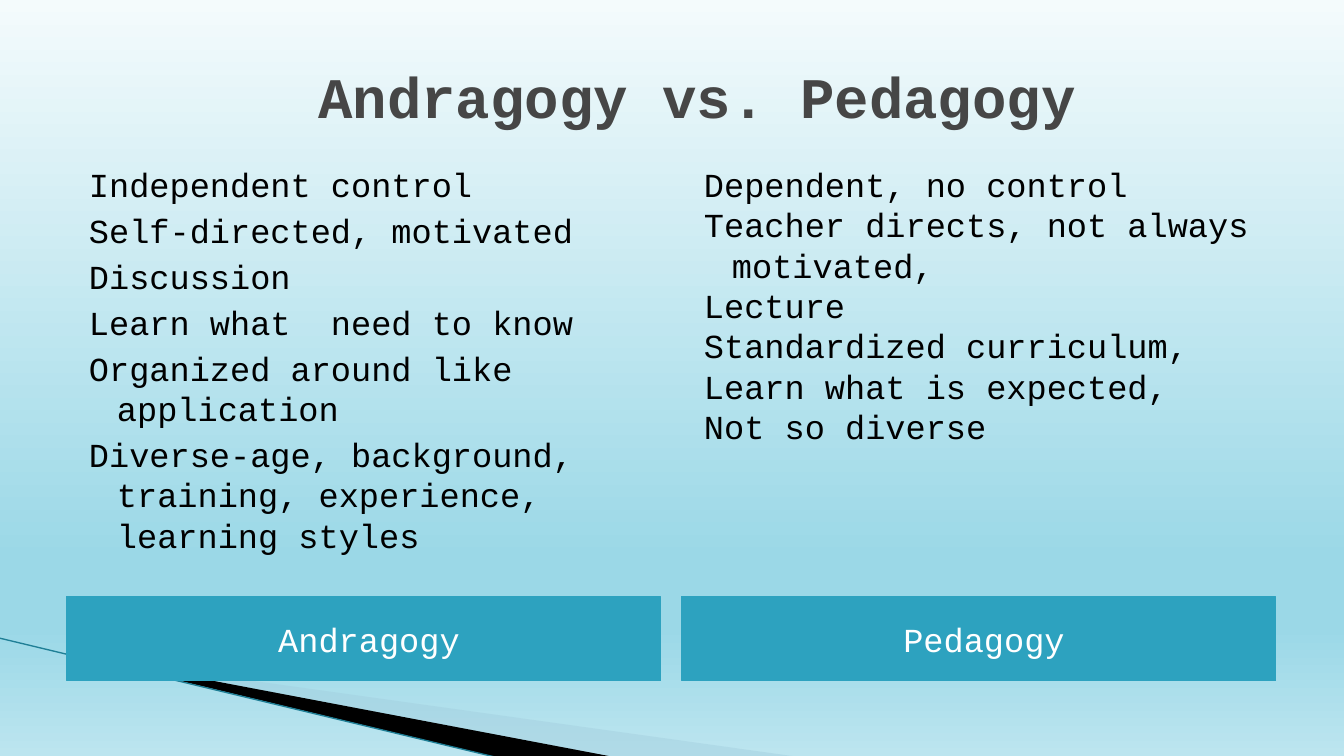
from dataclasses import dataclass

from lxml import etree
from pptx import Presentation
from pptx.dml.color import RGBColor
from pptx.enum.shapes import MSO_CONNECTOR as CONN, MSO_SHAPE as SHAPE
from pptx.enum.text import MSO_ANCHOR as ANCHOR, MSO_AUTO_SIZE as AUTO, PP_ALIGN as ALIGN
from pptx.oxml.ns import qn
from pptx.util import Pt

# Content
TITLE = "Andragogy vs. Pedagogy"
COLUMNS = [
    {"name": "Andragogy", "space": 4, "points": [
        "Independent control",
        "Self-directed, motivated",
        "Discussion",
        "Learn what  need to know",
        "Organized around like application",
        "Diverse-age, background, training, experience, learning styles",
    ]},
    {"name": "Pedagogy", "space": 0, "points": [
        "Dependent, no control",
        "Teacher directs, not always motivated,",
        "Lecture",
        "Standardized curriculum,",
        "Learn what is expected,",
        "Not so diverse",
    ]},
]


@dataclass(frozen=True)
class Theme:
    font: str = "Courier New"
    title: str = "464646"
    text: str = "000000"
    bar: str = "2DA2BF"
    bar_text: str = "FFFFFF"
    wedge: str = "A0CBDC"
    band: str = "000000"
    edge: str = "1F7F96"
    title_size: int = 41
    body_size: int = 24
    sky: tuple = ((0, "F4FBFC"), (74, "9BD8E7"), (83, "9BD8E7"), (100, "BCE5EF"))


T = Theme()

# Layout in px
SCALE = 12192000 / 1344
SLIDE = (1344, 756)
TITLE_BOX = (244, 33, 907, 126)
LEFT, COL_W, COL_STEP = 67, 594, 615
TEXT_TOP, TEXT_H = 159, 434
BAR_TOP, BAR_H = 597, 84
MARGIN, HANGING = 40, -28
INSETS = {"margin_left": 10, "margin_right": 10, "margin_top": 5, "margin_bottom": 5}
WEDGE = [(74, 656), (799, 757), (613, 757), (74, 655)]
BAND = [(72, 654), (614, 757), (500, 758), (73, 655)]
EDGE = (-1, 638, 499, 758)


def px(value):
    return round(value * SCALE)


def rgb(value):
    return RGBColor.from_string(value)


def apply(obj, **values):
    for name, value in values.items():
        setattr(obj, name, value)


def format_frame(tf, anchor, **insets):
    apply(tf, word_wrap=True, auto_size=AUTO.NONE, vertical_anchor=anchor)
    apply(tf, **{k: px(v) for k, v in {**INSETS, **insets}.items()})


def write(p, text, size, color, align, bold=False, space=0):
    apply(p, alignment=align, space_before=Pt(space))
    r = p.add_run()
    r.text = text
    apply(r.font, name=T.font, size=Pt(size), bold=bold)
    r.font.color.rgb = rgb(color)


def paint(sp, color, outline=False):
    sp.shadow.inherit = False
    sp.fill.solid()
    sp.fill.fore_color.rgb = rgb(color)
    if outline:
        sp.line.color.rgb = rgb(color)
        sp.line.width = Pt(0.75)
    else:
        sp.line.fill.background()


def paint_background(s):
    fill = s.background.fill
    fill.gradient()
    fill.gradient_angle = 270
    stops = s.background._cSld.find(".//" + qn("a:gsLst"))
    for old in list(stops):
        stops.remove(old)
    for pos, color in T.sky:
        gs = etree.SubElement(stops, qn("a:gs"), pos=str(pos * 1000))
        etree.SubElement(gs, qn("a:srgbClr"), val=color)


def add_swoosh(s):
    for points, color, alpha in ((WEDGE, T.wedge, 40), (BAND, T.band, 100)):
        builder = s.shapes.build_freeform(*points[0], scale=SCALE)
        builder.add_line_segments(points[1:], close=True)
        sp = builder.convert_to_shape()
        paint(sp, color)
        if alpha < 100:
            clr = sp._element.spPr.find(qn("a:solidFill"))[0]
            etree.SubElement(clr, qn("a:alpha"), val=str(alpha * 1000))
    edge = s.shapes.add_connector(CONN.STRAIGHT, *map(px, EDGE))
    edge.line.color.rgb = rgb(T.edge)
    edge.line.width = Pt(0.95)
    etree.SubElement(edge._element.spPr, qn("a:effectLst"))


def add_title(s):
    title = s.shapes.title
    apply(title, **dict(zip(("left", "top", "width", "height"), map(px, TITLE_BOX))))
    format_frame(title.text_frame, ANCHOR.MIDDLE)
    write(title.text_frame.paragraphs[0], TITLE, T.title_size, T.title, ALIGN.CENTER, bold=True)


def add_column(s, x, column):
    # Name bar
    bar = s.shapes.add_shape(SHAPE.RECTANGLE, *map(px, (x, BAR_TOP, COL_W, BAR_H)))
    paint(bar, T.bar, outline=True)
    format_frame(bar.text_frame, ANCHOR.MIDDLE, margin_left=20)
    write(bar.text_frame.paragraphs[0], column["name"], T.body_size, T.bar_text, ALIGN.CENTER)

    # Points with a hanging indent
    tf = s.shapes.add_textbox(*map(px, (x, TEXT_TOP, COL_W, TEXT_H))).text_frame
    format_frame(tf, ANCHOR.TOP)
    for i, point in enumerate(column["points"]):
        p = tf.add_paragraph() if i else tf.paragraphs[0]
        pPr = p._p.get_or_add_pPr()
        pPr.set("marL", str(px(MARGIN)))
        pPr.set("indent", str(px(HANGING)))
        write(p, point, T.body_size, T.text, ALIGN.LEFT, space=column["space"] if i else 0)


def main():
    prs = Presentation()
    prs.slide_width, prs.slide_height = map(px, SLIDE)
    s = prs.slides.add_slide(prs.slide_layouts[5])
    paint_background(s)
    add_swoosh(s)
    add_title(s)
    for i, column in enumerate(COLUMNS):
        add_column(s, LEFT + i * COL_STEP, column)
    prs.save("out.pptx")


if __name__ == "__main__":
    main()
